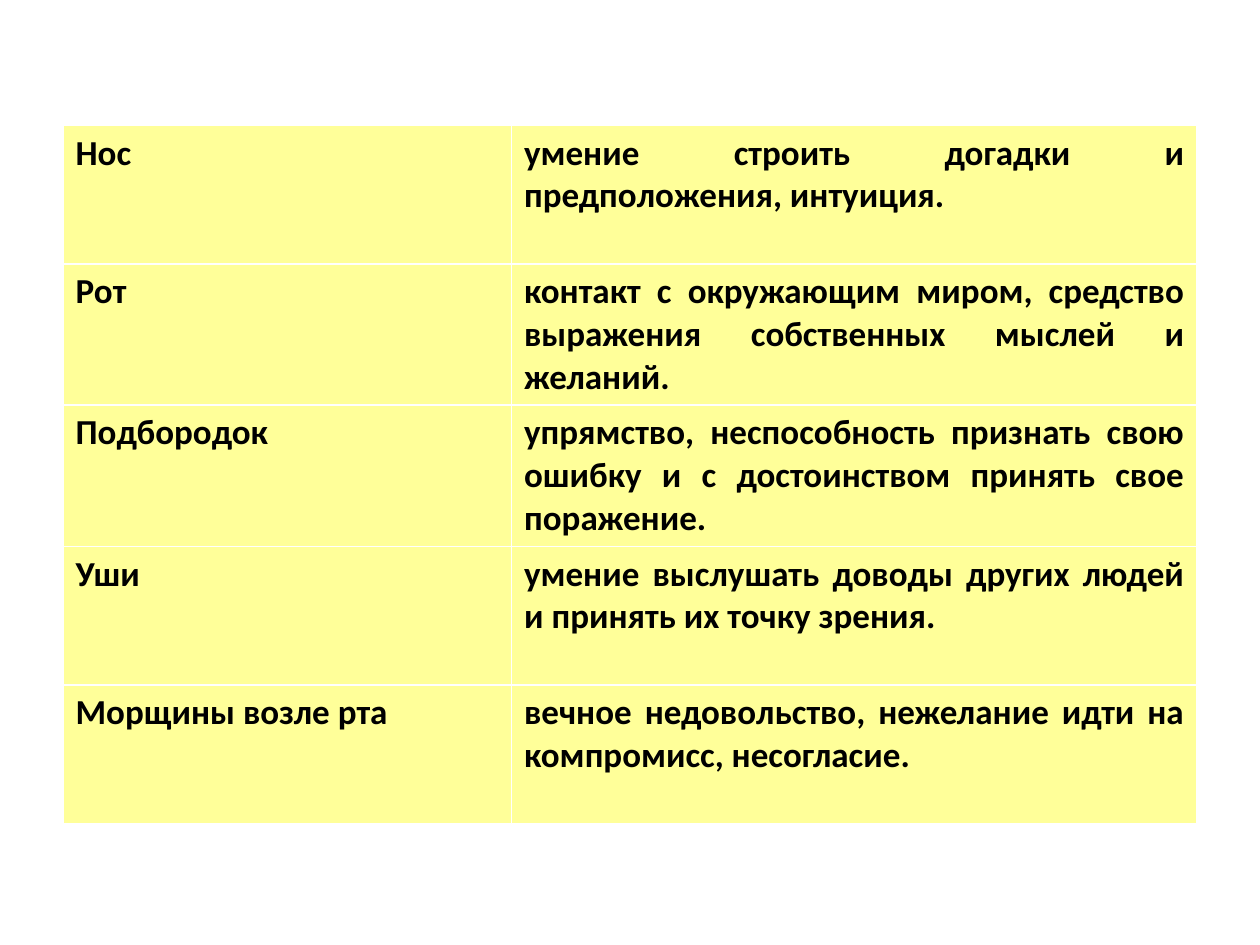
import pptx
import pptx.util
import pptx.dml.color
import pptx.enum.text

YELLOW = pptx.dml.color.RGBColor(0xFF, 0xFF, 0x99)
BLACK = pptx.dml.color.RGBColor(0, 0, 0)

TRAITS = [
    ("Нос", "умение строить догадки и предположения, интуиция."),
    ("Рот", "контакт с окружающим миром, средство выражения собственных мыслей и желаний."),
    ("Подбородок", "упрямство, неспособность признать свою ошибку "
                   "и с достоинством принять свое поражение."),
    ("Уши", "умение выслушать доводы других людей и принять их точку зрения."),
    ("Морщины возле рта", "вечное недовольство, нежелание идти на компромисс, несогласие."),
]

# Slide
deck = pptx.Presentation()
deck.slide_width = pptx.util.Inches(10)
deck.slide_height = pptx.util.Inches(7.5)
wide, high = deck.slide_width, deck.slide_height
slide = deck.slides.add_slide(deck.slide_layouts[6])

# Table: its style draws white rules, with a thicker one under the first row
left = int(wide * 0.05)
top = int(high * 0.13) + pptx.util.Inches(0.02)
width = wide - 2 * left
row_high = pptx.util.Inches(1.1)
frame = slide.shapes.add_table(len(TRAITS), 2, left, top, width, row_high * len(TRAITS))
table = frame.table
table.horz_banding = False
table.columns[0].width = pptx.util.Inches(3.56)
table.columns[1].width = width - table.columns[0].width

# Cells
for r, trait in enumerate(TRAITS):
    table.rows[r].height = row_high
    for c, text in enumerate(trait):
        cell = table.cell(r, c)
        cell.fill.solid()
        cell.fill.fore_color.rgb = YELLOW
        cell.text = text
        para = cell.text_frame.paragraphs[0]
        para.alignment = pptx.enum.text.PP_ALIGN.JUSTIFY
        para.font.name = "Calibri"
        para.font.size = pptx.util.Pt(20)
        para.font.bold = True
        para.font.color.rgb = BLACK

deck.save("out.pptx")
